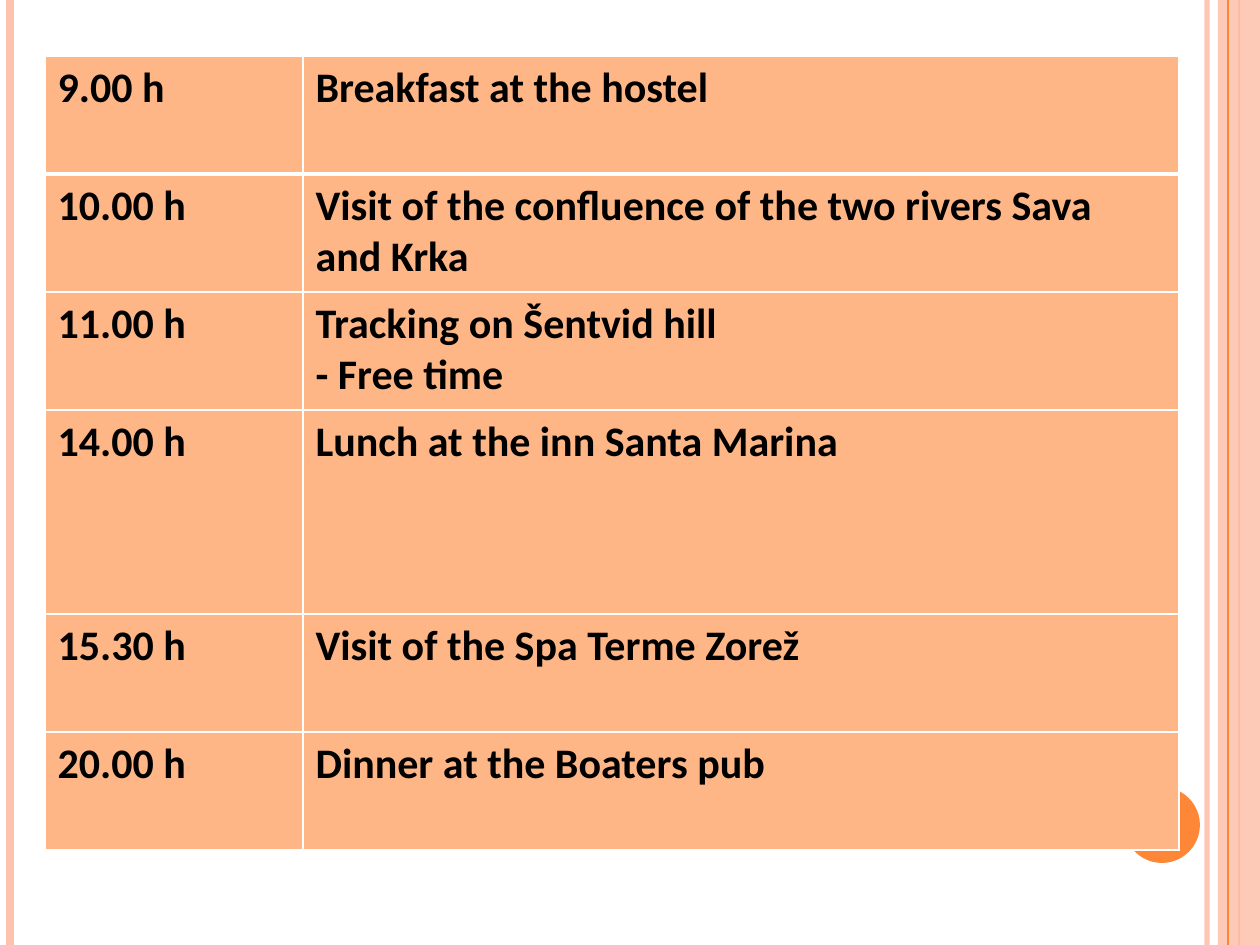
from dataclasses import dataclass

from lxml import etree
from pptx import Presentation
from pptx.dml.color import RGBColor
from pptx.enum.shapes import MSO_CONNECTOR, MSO_SHAPE
from pptx.oxml.ns import qn
from pptx.util import Emu, Pt

STRAIGHT = MSO_CONNECTOR.STRAIGHT
RECTANGLE = MSO_SHAPE.RECTANGLE
OVAL = MSO_SHAPE.OVAL

EMU_PER_PX = 914400 / 126
SLIDE_WIDTH, SLIDE_HEIGHT = 1260, 945


@dataclass(frozen=True)
class Theme:
    orange: str = "FE8637"
    pale: str = "FEC3AE"
    cell: str = "FEB687"
    border: str = "FFFFFF"
    text: str = "000000"
    font: str = "Calibri"
    text_size: int = 24
    border_width: int = 1
    header_border_width: int = 3


@dataclass(frozen=True)
class Stripe:
    x: int
    color: str
    width: float
    opacity: int = 100


@dataclass(frozen=True)
class Block:
    kind: int
    left: int
    top: int
    width: int
    height: int
    color: str
    opacity: int = 100


@dataclass(frozen=True)
class Event:
    time: str
    lines: tuple[str, ...]
    height: int = 118


THEME = Theme()

# Decoration, from back to front
DECORATION = (
    Stripe(1207, THEME.pale, 3, 93),
    Stripe(10, THEME.pale, 4.5),
    Stripe(1239, THEME.orange, 1.5),
    Block(RECTANGLE, 1218, 0, 42, SLIDE_HEIGHT, THEME.pale, 87),
    Stripe(1228, THEME.orange, 0.75),
    Block(OVAL, 1124, 787, 76, 76, THEME.orange),
)

# Timetable
TABLE_LEFT, TABLE_TOP = 45, 56
COLUMN_WIDTHS = (258, 876)
EVENTS = (
    Event("9.00 h", ("Breakfast at the hostel",)),
    Event("10.00 h", ("Visit of the confluence of the two rivers Sava and Krka",)),
    Event("11.00 h", ("Tracking on Šentvid hill", "- Free time")),
    Event("14.00 h", ("Lunch at the inn Santa Marina",), 204),
    Event("15.30 h", ("Visit of the Spa Terme Zorež",)),
    Event("20.00 h", ("Dinner at the Boaters pub",)),
)


def px(length: int) -> Emu:
    return Emu(round(length * EMU_PER_PX))


def set_opacity(properties, percent: int) -> None:
    if percent < 100:
        color = next(properties.iter(qn("a:srgbClr")))
        etree.SubElement(color, qn("a:alpha"), val=str(percent * 1000))


def draw_stripe(slide, stripe: Stripe) -> None:
    connector = slide.shapes.add_connector(
        STRAIGHT, px(stripe.x), 0, px(stripe.x), px(SLIDE_HEIGHT))
    connector.line.color.rgb = RGBColor.from_string(stripe.color)
    connector.line.width = Pt(stripe.width)
    properties = connector._element.spPr
    set_opacity(properties, stripe.opacity)
    etree.SubElement(properties, qn("a:effectLst"))


def draw_block(slide, block: Block) -> None:
    shape = slide.shapes.add_shape(
        block.kind, px(block.left), px(block.top), px(block.width), px(block.height))
    shape.shadow.inherit = False
    shape.fill.solid()
    shape.fill.fore_color.rgb = RGBColor.from_string(block.color)
    shape.line.fill.background()
    set_opacity(shape._element.spPr, block.opacity)


def set_borders(cell, top: int, bottom: int) -> None:
    side = THEME.border_width
    widths = {"a:lnL": side, "a:lnR": side, "a:lnT": top, "a:lnB": bottom}
    properties = cell._tc.get_or_add_tcPr()
    for index, (tag, width) in enumerate(widths.items()):
        line = etree.Element(qn(tag), w=str(Pt(width)))
        fill = etree.SubElement(line, qn("a:solidFill"))
        etree.SubElement(fill, qn("a:srgbClr"), val=THEME.border)
        properties.insert(index, line)


def fill_cell(cell, lines: tuple[str, ...]) -> None:
    cell.fill.solid()
    cell.fill.fore_color.rgb = RGBColor.from_string(THEME.cell)
    frame = cell.text_frame
    for index, line in enumerate(lines):
        paragraph = frame.add_paragraph() if index else frame.paragraphs[0]
        run = paragraph.add_run()
        run.text = line
        run.font.name = THEME.font
        run.font.size = Pt(THEME.text_size)
        run.font.bold = True
        run.font.color.rgb = RGBColor.from_string(THEME.text)


def draw_timetable(slide, events: tuple[Event, ...]) -> None:
    table = slide.shapes.add_table(
        len(events), len(COLUMN_WIDTHS), px(TABLE_LEFT), px(TABLE_TOP),
        px(sum(COLUMN_WIDTHS)), px(sum(event.height for event in events))).table
    for column, width in zip(table.columns, COLUMN_WIDTHS):
        column.width = px(width)
    for index, (row, event) in enumerate(zip(table.rows, events)):
        row.height = px(event.height)
        # The thick rule lies between the first and second rows
        top = THEME.header_border_width if index == 1 else THEME.border_width
        bottom = THEME.header_border_width if index == 0 else THEME.border_width
        for cell, lines in zip(row.cells, ((event.time,), event.lines)):
            fill_cell(cell, lines)
            set_borders(cell, top, bottom)


def main() -> None:
    presentation = Presentation()
    presentation.slide_width = px(SLIDE_WIDTH)
    presentation.slide_height = px(SLIDE_HEIGHT)
    slide = presentation.slides.add_slide(presentation.slide_layouts[6])
    for part in DECORATION:
        if isinstance(part, Stripe):
            draw_stripe(slide, part)
        else:
            draw_block(slide, part)
    draw_timetable(slide, EVENTS)
    presentation.save("out.pptx")


if __name__ == "__main__":
    main()
